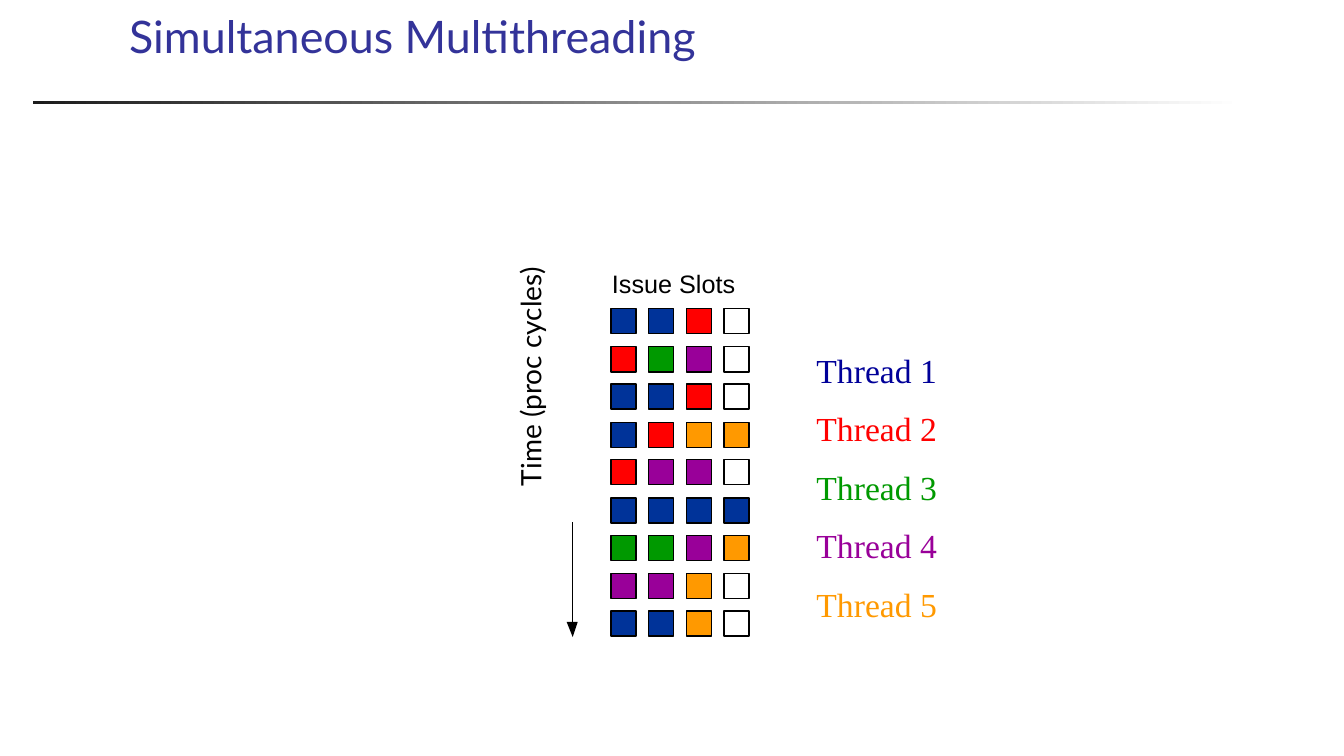
from dataclasses import dataclass

from lxml import etree
from pptx import Presentation
from pptx.dml.color import RGBColor
from pptx.enum.shapes import MSO_CONNECTOR, MSO_SHAPE
from pptx.enum.text import MSO_ANCHOR, MSO_AUTO_SIZE, PP_ALIGN
from pptx.oxml.ns import qn
from pptx.util import Pt

RECTANGLE = MSO_SHAPE.RECTANGLE
STRAIGHT = MSO_CONNECTOR.STRAIGHT
TOP, BOTTOM = MSO_ANCHOR.TOP, MSO_ANCHOR.BOTTOM
NO_AUTO_SIZE = MSO_AUTO_SIZE.NONE
LEFT = PP_ALIGN.LEFT

EMU_PER_PX = 9144
TITLE_ONLY = 5


@dataclass(frozen=True)
class Theme:
    title: str = "333399"
    ink: str = "000000"
    rule_start: str = "1C1C1C"
    rule_end: str = "FFFFFF"
    heading_font: str = "Lato"
    label_font: str = "Arial"
    legend_font: str = "Times New Roman"
    title_size: int = 32
    legend_size: int = 24
    axis_size: int = 20
    label_size: int = 18
    legend_gap: int = 13
    line_width: int = 1


THEME = Theme()

SLOT_COLORS = {
    "1": "003399",
    "2": "FF0000",
    "3": "009900",
    "4": "990099",
    "5": "FF9900",
    ".": "FFFFFF",
}
CYCLES = ["112.", "234.", "112.", "1255", "244.", "1111", "3345", "445.", "115."]
THREADS = [
    ("Thread 1", "000099"),
    ("Thread 2", "FF0000"),
    ("Thread 3", "009900"),
    ("Thread 4", "990099"),
    ("Thread 5", "FF9900"),
]
GRID_LEFT, GRID_TOP, SLOT_SIZE = 606, 306, 25


def px(*lengths):
    return [length * EMU_PER_PX for length in lengths]


def rgb(color):
    return RGBColor.from_string(color)


def add_run(paragraph, text, font, size, color):
    run = paragraph.add_run()
    run.text = text
    run.font.name = font
    run.font.size = Pt(size)
    run.font.color.rgb = rgb(color)


def add_title(slide, text):
    title = slide.shapes.title
    title.left, title.top, title.width, title.height = px(118, 15, 1182, 52)
    frame = title.text_frame
    frame.auto_size = NO_AUTO_SIZE
    frame.vertical_anchor = BOTTOM
    paragraph = frame.paragraphs[0]
    paragraph.alignment = LEFT
    add_run(paragraph, text, THEME.heading_font, THEME.title_size, THEME.title)


def add_rule(slide):
    rule = slide.shapes.add_shape(RECTANGLE, *px(33, 100, 1200, 3))
    rule.shadow.inherit = False
    rule.line.fill.background()
    rule.fill.gradient()
    rule.fill.gradient_angle = 0
    for stop, color in zip(rule.fill.gradient_stops, (THEME.rule_start, THEME.rule_end)):
        stop.color.rgb = rgb(color)


def add_text_box(slide, box, wrap=True):
    shape = slide.shapes.add_textbox(*px(*box))
    shape.text_frame.word_wrap = wrap
    shape.text_frame.vertical_anchor = TOP
    return shape


def add_axis_label(slide, text):
    shape = add_text_box(slide, (364, 307, 329, 41))
    shape.rotation = 270
    paragraph = shape.text_frame.paragraphs[0]
    paragraph.line_spacing = 0.9
    add_run(paragraph, text, THEME.heading_font, THEME.axis_size, THEME.ink)


def add_grid_label(slide, text):
    frame = add_text_box(slide, (607, 266, 123, 30), wrap=False).text_frame
    frame.margin_left = frame.margin_right = frame.margin_top = frame.margin_bottom = 0
    add_run(frame.paragraphs[0], text, THEME.label_font, THEME.label_size, THEME.ink)


def add_slot(slide, row, column, color):
    left = GRID_LEFT + 75 * column // 2
    top = GRID_TOP + (75 * row + 1) // 2
    slot = slide.shapes.add_shape(RECTANGLE, *px(left, top, SLOT_SIZE, SLOT_SIZE))
    slot.shadow.inherit = False
    slot.fill.solid()
    slot.fill.fore_color.rgb = rgb(color)
    slot.line.color.rgb = rgb(THEME.ink)
    slot.line.width = Pt(THEME.line_width)


def add_time_arrow(slide):
    shaft = slide.shapes.add_connector(STRAIGHT, *px(568, 518, 568, 628))
    shaft.line.color.rgb = rgb(THEME.ink)
    shaft.line.width = Pt(THEME.line_width)
    etree.SubElement(shaft._element.spPr, qn("a:effectLst"))
    builder = slide.shapes.build_freeform(568, 632, scale=EMU_PER_PX)
    builder.add_line_segments([(562, 617), (573, 617)], close=True)
    head = builder.convert_to_shape()
    head.shadow.inherit = False
    head.fill.solid()
    head.fill.fore_color.rgb = rgb(THEME.ink)
    head.line.fill.background()


def add_legend(slide):
    frame = add_text_box(slide, (800, 342, 217, 293)).text_frame
    for index, (name, color) in enumerate(THREADS):
        paragraph = frame.add_paragraph() if index else frame.paragraphs[0]
        if index:
            paragraph.space_before = Pt(THEME.legend_gap)
        add_run(paragraph, name, THEME.legend_font, THEME.legend_size, color)


def main():
    presentation = Presentation()
    presentation.slide_width, presentation.slide_height = px(1333, 750)
    slide = presentation.slides.add_slide(presentation.slide_layouts[TITLE_ONLY])
    add_rule(slide)
    add_title(slide, "Simultaneous Multithreading")
    add_axis_label(slide, "Time (proc cycles)")
    for row, cycle in enumerate(CYCLES):
        for column, thread in enumerate(cycle):
            add_slot(slide, row, column, SLOT_COLORS[thread])
    add_grid_label(slide, "Issue Slots")
    add_time_arrow(slide)
    add_legend(slide)
    presentation.save("out.pptx")


if __name__ == "__main__":
    main()
